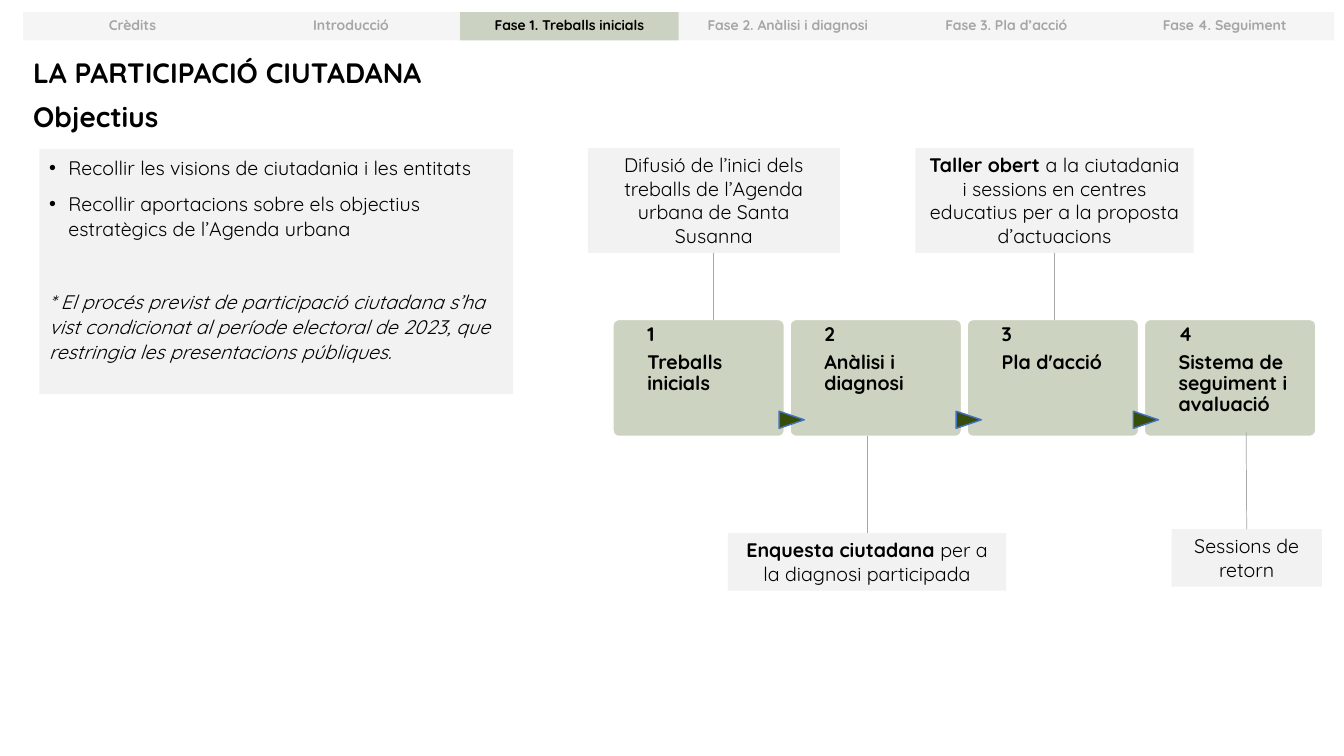
"""Build the slide on citizen participation and its four phases."""
from dataclasses import dataclass

from lxml import etree
from pptx import Presentation
from pptx.dml.color import RGBColor
from pptx.enum.shapes import MSO_CONNECTOR, MSO_SHAPE
from pptx.enum.text import MSO_ANCHOR, PP_ALIGN
from pptx.oxml.ns import qn
from pptx.util import Inches, Pt

RECT = MSO_SHAPE.RECTANGLE
ROUND = MSO_SHAPE.ROUNDED_RECTANGLE
WEDGE = MSO_SHAPE.FLOWCHART_EXTRACT
LINE = MSO_CONNECTOR.STRAIGHT
TOP, MIDDLE = MSO_ANCHOR.TOP, MSO_ANCHOR.MIDDLE
LEFT, CENTER = PP_ALIGN.LEFT, PP_ALIGN.CENTER

FONT = "Quicksand"
COLORS = {
    "black": "000000", "white": "FFFFFF", "grey": "A6A6A6", "tab": "D9D9D9",
    "panel": "F2F2F2", "sage": "CDD3C1", "olive": "374E0A", "blue": "4472C4",
}
TABS = ["Crèdits", "Introducció", "Fase 1. Treballs inicials",
        "Fase 2. Anàlisi i diagnosi", "Fase 3. Pla d’acció", "Fase 4. Seguiment"]
ACTIVE = 2
TITLES = ["LA PARTICIPACIÓ CIUTADANA", "Objectius"]
GOALS = ["Recollir les visions de ciutadania i les entitats",
         "Recollir aportacions sobre els objectius estratègics de l’Agenda urbana"]
REMARK = ("* El procés previst de participació ciutadana s’ha vist condicionat al "
          "període electoral de 2023, que restringia les presentacions públiques.")
STEPS = ["Treballs inicials", "Anàlisi i diagnosi", "Pla d'acció",
         "Sistema de seguiment i avaluació"]


@dataclass
class Note:
    """A grey note tied to a step by a line from one of its sides."""
    lead: str
    text: str
    left: float
    top: float
    width: float
    height: float
    side: int
    end: tuple[float, float]


NOTES = [
    Note("Enquesta ciutadana ", "per a la diagnosi participada",
         7.22, 5.29, 2.76, 0.57, 0, (8.6, 4.33)),
    Note("Taller obert ", "a la ciutadania i sessions en centres educatius "
         "per a la proposta d’actuacions", 9.08, 1.47, 2.76, 1.04, 2, (10.46, 3.17)),
    Note("", "Difusió de l’inici dels treballs de l’Agenda urbana de Santa Susanna",
         5.83, 1.47, 2.5, 1.04, 2, (7.08, 3.17)),
    Note("", "Sessions de retorn", 11.62, 5.25, 1.49, 0.57, 0, (12.36, 4.29)),
]


def rgb(name: str) -> RGBColor:
    """Look up a colour by name."""
    return RGBColor.from_string(COLORS[name])


def add_box(slide, kind, left: float, top: float, width: float, height: float,
            fill: str, edge: str = ""):
    """Add a filled shape, with a one-point edge if named."""
    box = slide.shapes.add_shape(kind, Inches(left), Inches(top),
                                 Inches(width), Inches(height))
    box.shadow.inherit = False
    box.fill.solid()
    box.fill.fore_color.rgb = rgb(fill)
    if edge:
        box.line.color.rgb = rgb(edge)
        box.line.width = Pt(1)
    else:
        box.line.fill.background()
    box.text_frame.word_wrap = True
    box.text_frame.vertical_anchor = TOP
    return box


def add_text(slide, left: float, top: float, width: float, height: float):
    """Add a wrapping text box and return its frame."""
    frame = slide.shapes.add_textbox(Inches(left), Inches(top), Inches(width),
                                     Inches(height)).text_frame
    frame.word_wrap = True
    return frame


def style(para, size: float, bold: bool = False, color: str = "black",
          align=LEFT, pitch: float = 1.0, after: float = 0) -> None:
    """Format a paragraph and all its runs."""
    para.alignment = align
    para.line_spacing = pitch
    para.space_after = Pt(after)
    for run in para.runs:
        font = run.font
        font.name, font.size, font.bold = FONT, Pt(size), bold
        font.color.rgb = rgb(color)


def add_tabs(slide) -> None:
    """Draw the row of navigation tabs."""
    width = 13 / len(TABS)
    for i, name in enumerate(TABS):
        live = i == ACTIVE
        tab = add_box(slide, RECT, 0.23 + i * width, 0.12, width, 0.28,
                      "olive" if live else "tab")
        tint = tab.fill._xPr.find(".//" + qn("a:srgbClr"))
        etree.SubElement(tint, qn("a:alpha"), val="25000")
        frame = tab.text_frame
        frame.text = name
        frame.vertical_anchor = MIDDLE
        style(frame.paragraphs[0], 10, True, "black" if live else "grey", CENTER, 0.9)


def add_goals(slide) -> None:
    """Draw the panel of goals and the remark below them."""
    frame = add_box(slide, RECT, 0.39, 1.48, 4.7, 2.43, "panel").text_frame
    frame.text = "\n".join(GOALS + [REMARK])
    for para in frame.paragraphs:
        style(para, 14, pitch=1.07, after=8)
    *goals, remark = frame.paragraphs
    for para in goals:
        props = para._p.get_or_add_pPr()
        props.set("marL", str(Inches(0.19)))
        props.set("indent", str(-Inches(0.19)))
        etree.SubElement(props, qn("a:buFont"), typeface="Arial")
        etree.SubElement(props, qn("a:buChar"), char="•")
    remark.space_before = Pt(26)
    remark.runs[0].font.italic = True


def add_steps(slide) -> None:
    """Draw the four phase cards and the arrows between them."""
    for i, name in enumerate(STEPS):
        left = 6.08 + i * 5.27 / 3
        card = add_box(slide, ROUND, left, 3.17, 1.7, 1.16, "sage", "white")
        card.adjustments[0] = 0.05
        if i:
            wedge = add_box(slide, WEDGE, left - 0.07, 4.04, 0.17, 0.25, "olive", "blue")
            wedge.rotation = 90
        frame = add_text(slide, left + 0.34, 3.17, 1.27, 1.16)
        frame.margin_left = frame.margin_right = frame.margin_bottom = 0
        frame.text = f"{i + 1}\n{name}"
        for para in frame.paragraphs:
            style(para, 14, True, pitch=0.9, after=5)


def add_note(slide, note: Note) -> None:
    """Draw a note and its line."""
    box = add_box(slide, RECT, note.left, note.top, note.width, note.height, "panel")
    para = box.text_frame.paragraphs[0]
    para.text = note.lead
    para.add_run().text = note.text
    style(para, 14, align=CENTER)
    if note.lead:
        para.runs[0].font.bold = True
    x, y = (Inches(v) for v in note.end)
    link = slide.shapes.add_connector(LINE, x, y, x, y)
    link.begin_connect(box, note.side)
    link.line.color.rgb = rgb("grey")
    link.line.width = Pt(0.5)
    etree.SubElement(link._element.spPr, qn("a:effectLst"))


def main() -> None:
    """Build and save the slide."""
    deck = Presentation()
    deck.slide_width, deck.slide_height = Inches(13.33), Inches(7.5)
    slide = deck.slides.add_slide(deck.slide_layouts[6])
    add_tabs(slide)
    for i, title in enumerate(TITLES):
        frame = add_text(slide, 0.23, 0.5 + i * 0.44, 6.28, 0.44)
        frame.text = title
        style(frame.paragraphs[0], 20, True)
    add_steps(slide)
    add_goals(slide)
    for note in NOTES:
        add_note(slide, note)
    deck.save("out.pptx")


if __name__ == "__main__":
    main()
